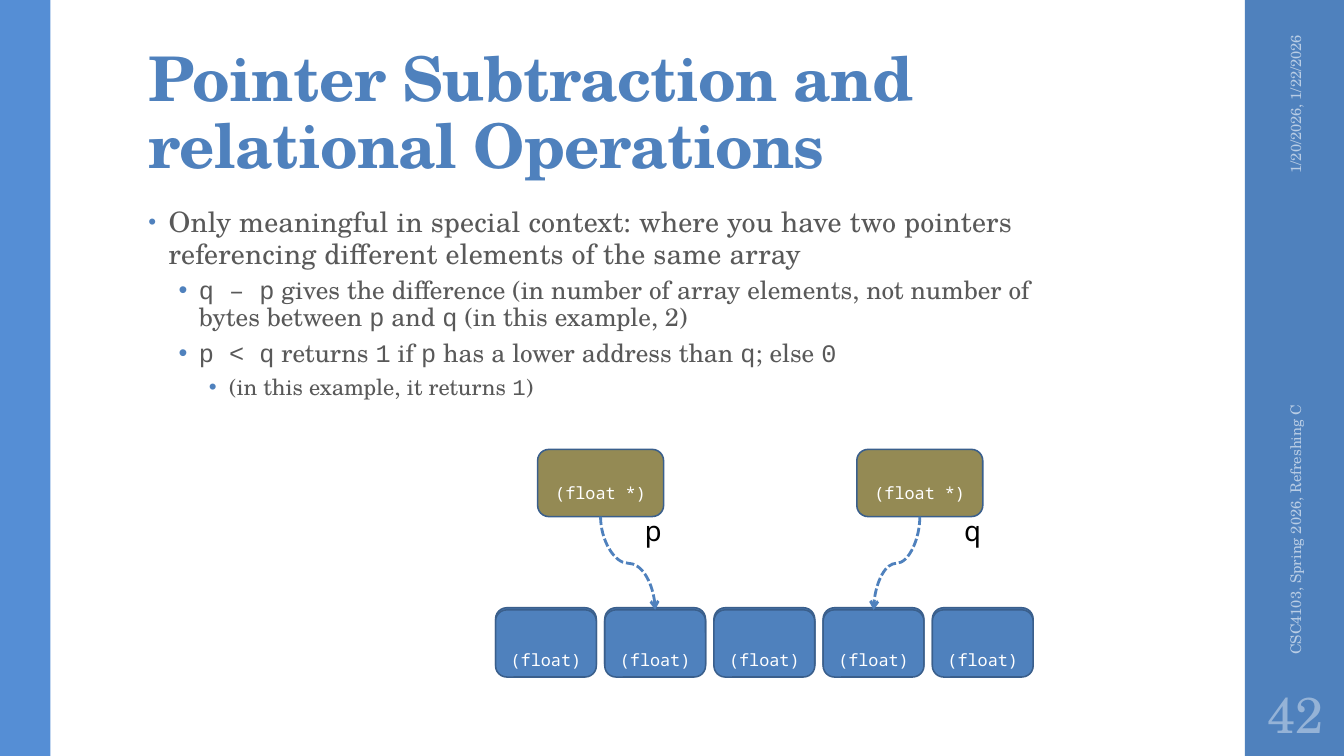
from lxml import etree
from pptx import Presentation
from pptx import util as u
from pptx.dml.color import RGBColor
from pptx.enum import dml, shapes, text
from pptx.oxml import ns

BLUE = RGBColor(0x4F, 0x81, 0xBD)
SKY = RGBColor(0x55, 0x8E, 0xD5)
EDGE = RGBColor(0x3A, 0x5F, 0x8C)
OLIVE = RGBColor(0x94, 0x8A, 0x54)
GRAY = RGBColor(0x59, 0x59, 0x59)
PALE = RGBColor(0xB9, 0xCD, 0xE5)
MIST = RGBColor(0x95, 0xB3, 0xD7)
WHITE = RGBColor(0xFF, 0xFF, 0xFF)
BLACK = RGBColor(0, 0, 0)

SERIF, CODE, MONO = "TeX Gyre Schola", "Courier New", "Noto Sans Mono"
COLS, ROWS = 160, 90
UNIT = u.Inches(1) / 12
MID = text.MSO_ANCHOR.MIDDLE
LEFT, MIDDLE, RIGHT = text.PP_ALIGN.LEFT, text.PP_ALIGN.CENTER, text.PP_ALIGN.RIGHT

LEVELS = [
    dict(size=20, indent=0.2, line=0.95, before=14, after=2, bullet=80, track=10),
    dict(size=18, indent=0.5, line=0.9, before=3, after=3, bullet=100, track=0),
    dict(size=16, indent=0.8, line=0.9, before=3, after=3, bullet=100, track=0),
]
POINTS = [
    (0, "Only meaningful in special context: where you have two pointers "
        "referencing different elements of the same array"),
    (1, "`q – p` gives the difference (in number of array elements, not number "
        "of bytes between `p` and `q` (in this example, 2)"),
    (1, "`p < q` returns `1` if `p` has a lower address than `q`; else `0`"),
    (2, "(in this example, it returns `1`)"),
]


def cells(*spans):
    return [u.Emu(round(span * UNIT)) for span in spans]


def style(item, form):
    for key, value in form.items():
        setattr(item, key, value)


def write(para, words, size, face, color, bold=False, track=0):
    run = para.add_run()
    run.text = words
    style(run.font, dict(size=u.Pt(size), name=face, bold=bold))
    run.font.color.rgb = color
    if track:
        run.font._element.set("spc", str(track))


def label(slide, area, words, size, face, color, align=LEFT, turn=0, **form):
    box = slide.shapes.add_textbox(*cells(*area))
    box.rotation = turn
    style(box.text_frame, {"word_wrap": True, **form})
    para = box.text_frame.paragraphs[0]
    para.alignment = align
    write(para, words, size, face, color)


def block(slide, kind, area, fill, edge=None):
    shape = slide.shapes.add_shape(kind, *cells(*area))
    shape.shadow.inherit = False
    shape.fill.solid()
    shape.fill.fore_color.rgb = fill
    if edge is None:
        shape.line.fill.background()
    else:
        shape.line.color.rgb = edge
        shape.line.width = u.Pt(1.1)
    return shape


def cell(slide, area, fill, words="", drop=0):
    shape = block(slide, shapes.MSO_SHAPE.ROUNDED_RECTANGLE, area, fill, EDGE)
    if words:
        frame = shape.text_frame
        style(frame, dict(vertical_anchor=MID, word_wrap=True,
                          margin_top=u.Inches(0.05 + drop)))
        frame.paragraphs[0].alignment = MIDDLE
        write(frame.paragraphs[0], words, 12, MONO, WHITE)
    return shape


def curve(slide, start, goal):
    x, y = start.left + start.width // 2, start.top + start.height
    end, foot = goal.left + goal.width // 2, goal.top
    link = slide.shapes.add_connector(shapes.MSO_CONNECTOR.CURVE, x, y, end, foot)
    link.begin_connect(start, 2)
    link.end_connect(goal, 0)
    wide, tall = foot - y, abs(end - x)
    frame = link._element.spPr.find(ns.qn("a:xfrm"))
    frame.attrib.clear()
    frame.set("rot", "16200000" if end > x else "5400000")
    if end > x:
        frame.set("flipH", "1")
    style(link, dict(left=(x + end - wide) // 2, top=(y + foot - tall) // 2,
                     width=wide, height=tall))
    link.line.color.rgb = BLUE
    style(link.line, dict(width=u.Pt(2), dash_style=dml.MSO_LINE.SQUARE_DOT))
    line = link.line._get_or_add_ln()
    line.find(ns.qn("a:prstDash")).set("val", "sysDash")
    etree.SubElement(line, ns.qn("a:tailEnd"), type="arrow")
    etree.SubElement(link._element.spPr, ns.qn("a:effectLst"))


def bullet(para, share, indent):
    props = para._p.get_or_add_pPr()
    props.set("marL", str(u.Inches(indent)))
    props.set("indent", str(-u.Inches(0.2)))
    tint = etree.SubElement(props, ns.qn("a:buClr"))
    etree.SubElement(tint, ns.qn("a:srgbClr"), val=str(BLUE))
    etree.SubElement(props, ns.qn("a:buSzPct"), val=str(share * 1000))
    etree.SubElement(props, ns.qn("a:buFont"), typeface="Arial")
    etree.SubElement(props, ns.qn("a:buChar"), char="•")


def body(slide):
    frame = slide.shapes.add_textbox(*cells(16.5, 24, 112.8, 57.1)).text_frame
    frame.word_wrap = True
    for i, (depth, words) in enumerate(POINTS):
        form = LEVELS[depth]
        para = frame.add_paragraph() if i else frame.paragraphs[0]
        style(para, dict(level=depth, line_spacing=form["line"],
                         space_before=u.Pt(form["before"] if i else 0),
                         space_after=u.Pt(form["after"])))
        bullet(para, form["bullet"], form["indent"])
        for j, part in enumerate(words.split("`")):
            if part:
                write(para, part, form["size"], CODE if j % 2 else SERIF,
                      GRAY, track=form["track"])


def title(slide):
    head = slide.shapes.title
    style(head, dict(zip(("left", "top", "width", "height"),
                         cells(16.5, 3.8, 127.2, 18.4))))
    style(head.text_frame, dict(
        vertical_anchor=text.MSO_ANCHOR.BOTTOM, word_wrap=True,
        auto_size=text.MSO_AUTO_SIZE.NONE, margin_left=u.Inches(0.1),
        margin_right=u.Inches(0.1), margin_top=u.Inches(0.03),
        margin_bottom=u.Inches(0.05)))
    para = head.text_frame.paragraphs[0]
    style(para, dict(alignment=LEFT, line_spacing=0.9))
    write(para, "Pointer Subtraction and relational Operations", 44, SERIF,
          BLUE, bold=True, track=-50)


def diagram(slide):
    lefts = [59 + 13 * i for i in range(5)]
    for x in lefts:
        cell(slide, (x, 72.35, 12, 8), BLUE)
    floats = [cell(slide, (x, 72.6, 12, 8), BLUE, "(float)", 0.33) for x in lefts]
    for name, x, goal in (("p", 64, floats[1]), ("q", 102, floats[3])):
        start = cell(slide, (x, 53.5, 15, 8), OLIVE, "(float *)", 0.2)
        label(slide, (x + 11.6, 60.6, 4.4, 5.3), name, 20, MONO, BLACK,
              word_wrap=False)
        curve(slide, start, goal)


def main():
    deck = Presentation()
    deck.slide_width, deck.slide_height = cells(COLS, ROWS)
    slide = deck.slides.add_slide(deck.slide_layouts[5])
    side = 148.2
    for x, wide, fill in ((side, COLS - side, BLUE), (0, 6, SKY)):
        block(slide, shapes.MSO_SHAPE.RECTANGLE, (x, 0, wide, ROWS), fill)
    title(slide)
    body(slide)
    diagram(slide)
    label(slide, (141.7, 13.1, 25, 4.8), "1/20/2026, 1/22/2026", 10.5, SERIF,
          PALE, RIGHT, 270, vertical_anchor=MID)
    label(slide, (130.7, 53.2, 47, 4.8), "CSC4103, Spring 2026, Refreshing C",
          10.5, SERIF, PALE, LEFT, 270, vertical_anchor=MID)
    label(slide, (side, 81, 12, 7.8), "42", 36, SERIF, MIST, MIDDLE,
          vertical_anchor=MID, margin_left=u.Inches(0.05),
          margin_right=u.Inches(0.05))
    deck.save("out.pptx")


if __name__ == "__main__":
    main()
